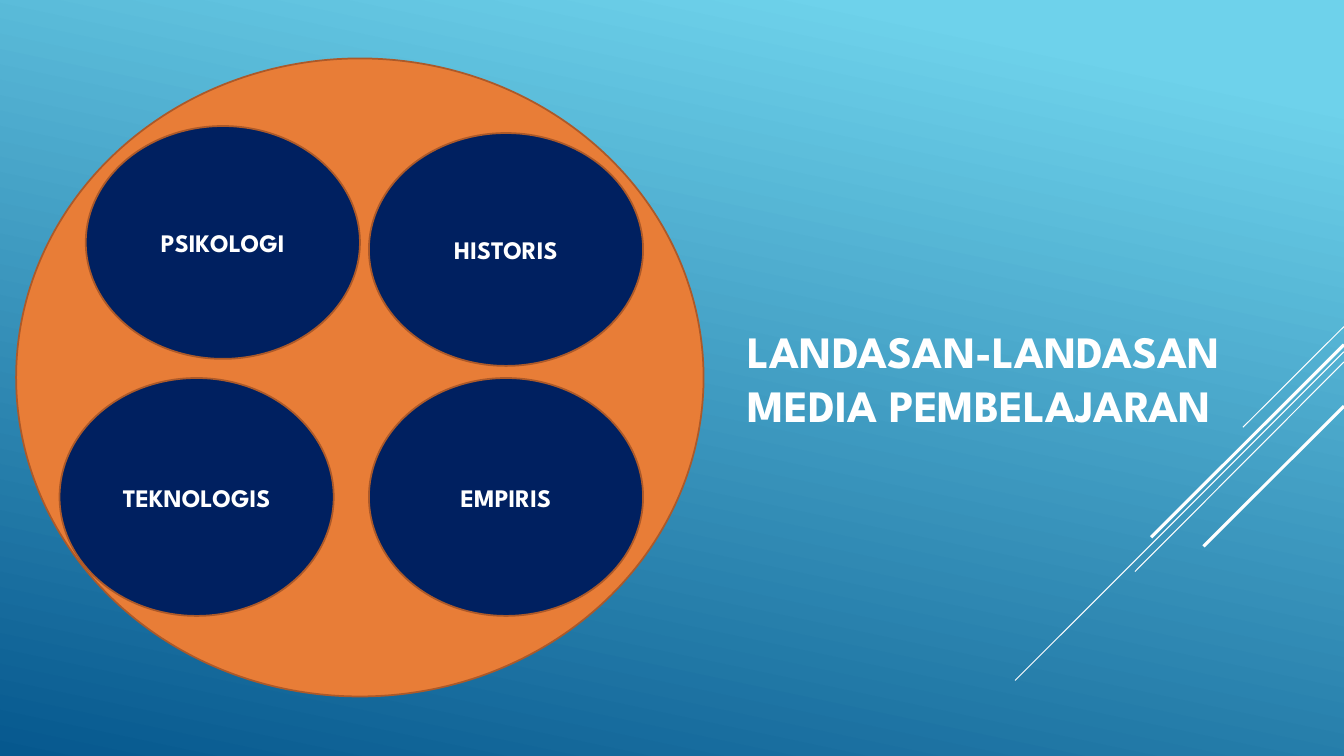
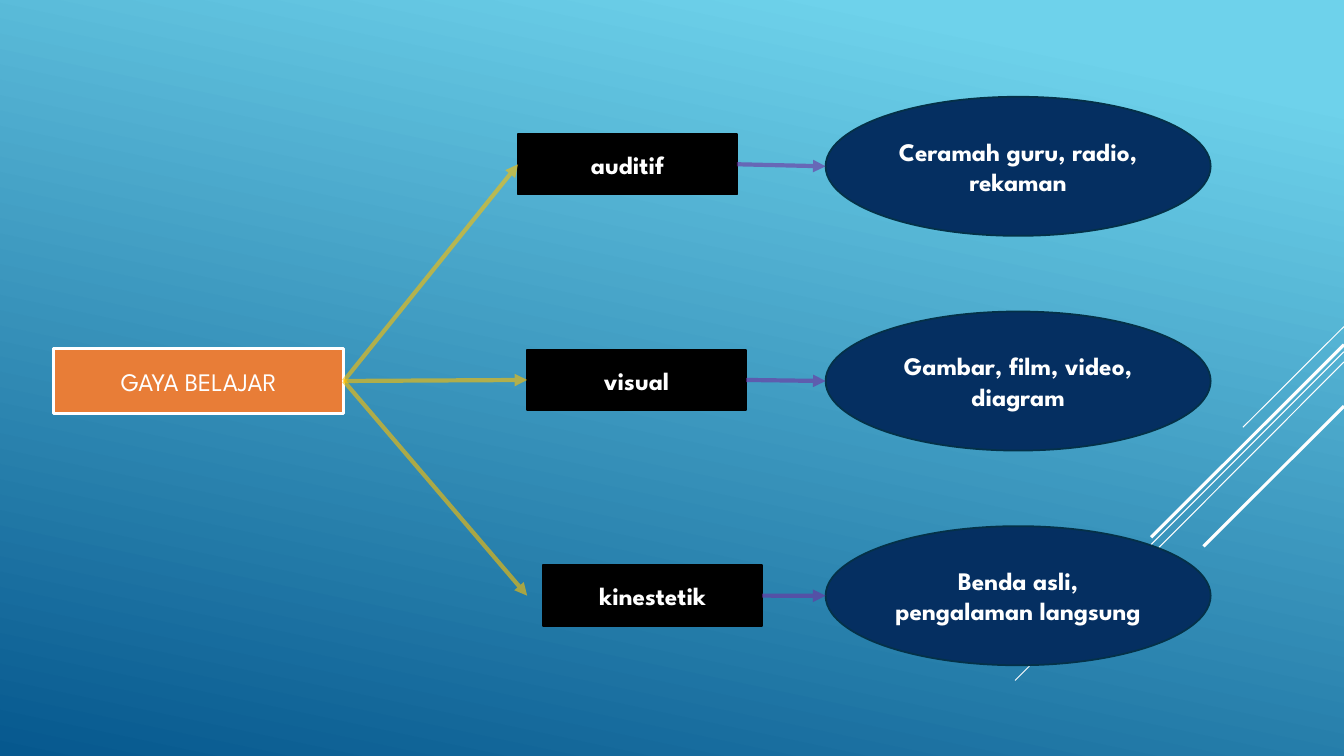
"""Build two slides on the foundations of learning media and on learning styles."""
import lxml.etree
import pptx
import pptx.dml.color
import pptx.enum.shapes
import pptx.enum.text
import pptx.oxml.ns
import pptx.util

RGBColor = pptx.dml.color.RGBColor
SKY = RGBColor(0x6E, 0xD2, 0xEB)
DEEP_BLUE = RGBColor(0x06, 0x58, 0x8E)
WHITE = RGBColor(0xFF, 0xFF, 0xFF)
BLACK = RGBColor(0x00, 0x00, 0x00)
ORANGE = RGBColor(0xE8, 0x7D, 0x37)
RUST = RGBColor(0xAC, 0x59, 0x29)
NAVY = RGBColor(0x00, 0x20, 0x60)
INK_BLUE = RGBColor(0x05, 0x2F, 0x61)
DARK_TEAL = RGBColor(0x04, 0x31, 0x48)
GOLD = RGBColor(0xFF, 0xC0, 0x00)
PURPLE = RGBColor(0x70, 0x30, 0xA0)

LABEL = {"name": "League Spartan", "size": pptx.util.Pt(18), "bold": True}
PLAIN_LABEL = {**LABEL, "bold": False}
TITLE = {**LABEL, "size": pptx.util.Pt(32)}
CENTRED = {"word_wrap": True, "vertical_anchor": pptx.enum.text.MSO_ANCHOR.MIDDLE}
GROWING = {"word_wrap": True, "auto_size": pptx.enum.text.MSO_AUTO_SIZE.SHAPE_TO_FIT_TEXT}
OVAL = pptx.enum.shapes.MSO_SHAPE.OVAL
RECTANGLE = pptx.enum.shapes.MSO_SHAPE.RECTANGLE
STRAIGHT = pptx.enum.shapes.MSO_CONNECTOR.STRAIGHT

deck = pptx.Presentation()
deck.slide_width = pptx.util.Emu(12192000)
deck.slide_height = pptx.util.Inches(7.5)
COLUMN = deck.slide_width / 100
ROW = deck.slide_height / 100


def add_box(page, kind, place, fill, edge, text="", font=LABEL, weight=1.25):
    left, top, width, height = place
    box = page.shapes.add_shape(
        kind, int(left * COLUMN), int(top * ROW), int(width * COLUMN), int(height * ROW)
    )
    box.shadow.inherit = False
    box.fill.solid()
    box.fill.fore_color.rgb = fill
    box.line.color.rgb = edge
    box.line.width = pptx.util.Pt(weight)
    for name, value in CENTRED.items():
        setattr(box.text_frame, name, value)
    para = box.text_frame.paragraphs[0]
    para.alignment = pptx.enum.text.PP_ALIGN.CENTER
    if text:
        span = para.add_run()
        span.text = text
        span.font.color.rgb = WHITE
        for name, value in font.items():
            setattr(span.font, name, value)
    return box


def add_line(page, start, end, color, weight, arrow=False):
    line = page.shapes.add_connector(
        STRAIGHT, int(start[0] * COLUMN), int(start[1] * ROW), int(end[0] * COLUMN), int(end[1] * ROW)
    )
    line.line.color.rgb = color
    line.line.width = pptx.util.Pt(weight)
    properties = line.element.spPr
    qn = pptx.oxml.ns.qn
    if arrow:
        shade = properties.find(".//" + qn("a:srgbClr"))
        lxml.etree.SubElement(shade, qn("a:alpha"), val="60000")
        lxml.etree.SubElement(properties.find(qn("a:ln")), qn("a:tailEnd"), type="triangle")
    lxml.etree.SubElement(properties, qn("a:effectLst"))
    return line


backdrop = deck.slide_master.background.fill
backdrop.gradient()
backdrop.gradient_angle = 258
for stop, (position, color) in zip(backdrop.gradient_stops, [(0.1, SKY), (1, DEEP_BLUE)]):
    stop.position = position
    stop.color.rgb = color

RAYS = [
    (43.2, (92.48, 56.53), 0.75),
    (46.53, (75.53, 90), 0.75),
    (47.87, (84.45, 75.6), 0.75),
    (45.6, (85.65, 71.07), 2.25),
    (53.73, (89.55, 72.27), 2.25),
]
pages = [deck.slides.add_slide(deck.slide_layouts[6]) for number in range(2)]
for page in pages:
    for height, end, weight in RAYS:
        add_line(page, (100, height), end, WHITE, weight)
foundations, styles = pages

add_box(foundations, OVAL, (1.2, 7.73, 51.15, 84.4), ORANGE, RUST)
for text, left, top, height in [
    ("PSIKOLOGI", 6.38, 16.67, 30.8),
    ("HISTORIS", 27.45, 17.6, 30.8),
    ("TEKNOLOGIS", 4.43, 50, 31.47),
    ("EMPIRIS", 27.45, 50, 31.47),
]:
    add_box(foundations, OVAL, (left, top, 20.4, height), NAVY, RUST, text)

title = foundations.shapes.add_textbox(
    int(54.9 * COLUMN), int(42.13 * ROW), int(38.7 * COLUMN), int(15.73 * ROW)
)
for name, value in GROWING.items():
    setattr(title.text_frame, name, value)
title.text_frame.text = "LANDASAN-LANDASAN\nMEDIA PEMBELAJARAN"
for para in title.text_frame.paragraphs:
    span = para.runs[0]
    span.font.color.rgb = WHITE
    for name, value in TITLE.items():
        setattr(span.font, name, value)

root = add_box(
    styles, RECTANGLE, (3.98, 46.13, 21.6, 8.53), ORANGE, WHITE, "GAYA BELAJAR", PLAIN_LABEL, 2.25
)
MIDDLE = 50.4
STEP = 28.4
ROOT_EXIT = (25.58, MIDDLE)
BRANCHES = [
    ("auditif", 38.55, "Ceramah guru, radio, rekaman"),
    ("visual", 39.23, "Gambar, film, video, diagram"),
    ("kinestetik", 40.43, "Benda asli, pengalaman langsung"),
]
style_boxes = []
for index, (style, left, examples) in enumerate(BRANCHES):
    centre = MIDDLE + (index - 1) * STEP
    add_box(styles, OVAL, (61.43, centre - 9.2, 28.65, 18.4), INK_BLUE, DARK_TEAL, examples)
    place = (left, 17.73 + 28.53 * index, 16.28, 8)
    style_boxes.append(add_box(styles, RECTANGLE, place, BLACK, BLACK, style))

for index, box in enumerate(style_boxes):
    centre = MIDDLE + (index - 1) * STEP
    branch = add_line(styles, ROOT_EXIT, (39.23, centre), GOLD, 3, arrow=True)
    branch.begin_connect(root, 3)
    if index < 2:
        branch.end_connect(box, 1)
    example = add_line(styles, ROOT_EXIT, (61.43, centre), PURPLE, 3, arrow=True)
    example.begin_connect(box, 3)

deck.save("out.pptx")
